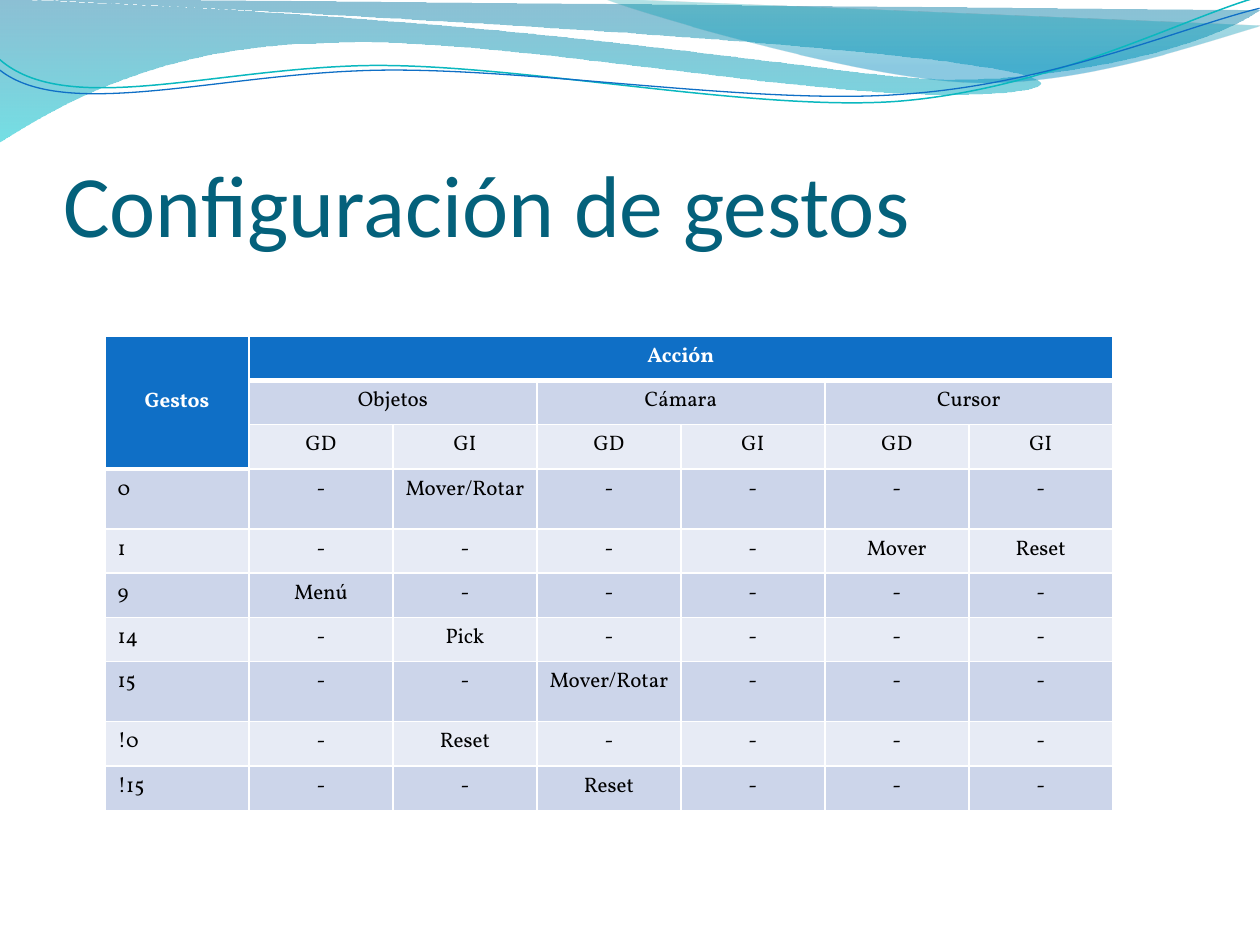
"""Build the gesture configuration slide: waves, title and action table."""
from lxml import etree
from pptx import Presentation
from pptx.dml.color import RGBColor
from pptx.enum.text import MSO_ANCHOR, MSO_AUTO_SIZE, PP_ALIGN
from pptx.oxml.ns import qn
from pptx.util import Pt

LEFT, CENTER = PP_ALIGN.LEFT, PP_ALIGN.CENTER
MIDDLE, TOP, BOTTOM = MSO_ANCHOR.MIDDLE, MSO_ANCHOR.TOP, MSO_ANCHOR.BOTTOM
NO_AUTOFIT = MSO_AUTO_SIZE.NONE

PX = 914400 // 126
WIDTH, HEIGHT = 1260, 945

WHITE = RGBColor(0xFF, 0xFF, 0xFF)
BLACK = RGBColor(0x00, 0x00, 0x00)
BLUE = RGBColor(0x0F, 0x6F, 0xC6)
TEAL = RGBColor(0x0A, 0xB8, 0xBF)
TITLE_COLOR = RGBColor(0x04, 0x61, 0x7B)
BANDS = (RGBColor(0xE7, 0xEB, 0xF5), RGBColor(0xCC, 0xD5, 0xEA))
DEEP_BLUE = RGBColor(0x00, 0x74, 0xA1)
CYAN = RGBColor(0x00, 0xC6, 0xCF)
SEA_GREEN = RGBColor(0x00, 0xA1, 0xA9)
SKY_BLUE = RGBColor(0x00, 0x8B, 0xBF)

TITLE = "Configuración de gestos"
TITLE_BOX = (63, 97, 1134, 158)

# Each wave lists its start, then lines (one point) and Bézier curves (three points).
WAVES = [
    ((0, 0), [
        [(554, -1)],
        [(600, 21), (837, 79), (955, 79)], [(1075, 79), (1207, 47), (1260, 11)],
        [(1261, 45)],
        [(1238, 55), (1096, 96), (940, 94)], [(784, 94), (481, 35), (324, 43)],
        [(163, 45), (58, 105), (-1, 142)],
        [(0, 0)],
    ], [(0, DEEP_BLUE, 45), (100, CYAN, 55)]),
    ((604, -1), [
        [(641, 14), (859, 78), (969, 82)], [(1079, 87), (1211, 40), (1260, 26)],
        [(1260, 0)],
        [(604, -1)],
    ], [(0, SEA_GREEN, 30), (80, SKY_BLUE, 45)]),
]
RIPPLE_ROTATION = 357.3
RIPPLES = [
    ((-2, 110), [
        [(58, 90), (199, 52), (350, 53)], [(499, 53), (745, 118), (896, 114)],
        [(1049, 109), (1184, 45), (1260, 27)],
    ], TEAL, 0.85),
    ((-2, 101), [
        [(57, 94), (207, 57), (357, 58)], [(509, 58), (750, 112), (902, 107)],
        [(1052, 104), (1188, 52), (1262, 38)],
    ], BLUE, 0.75),
]

TABLE_LEFT, TABLE_TOP, COLUMN_WIDTH = 105, 336, 144
ROW_HEIGHT, TALL_ROW_HEIGHT = 44.33, 60
ROWS = [
    ["Gestos", "Acción", "", "", "", "", ""],
    ["", "Objetos", "", "Cámara", "", "Cursor", ""],
    ["", "GD", "GI", "GD", "GI", "GD", "GI"],
    ["0", "-", "Mover/Rotar", "-", "-", "-", "-"],
    ["1", "-", "-", "-", "-", "Mover", "Reset"],
    ["9", "Menú", "-", "-", "-", "-", "-"],
    ["14", "-", "Pick", "-", "-", "-", "-"],
    ["15", "-", "-", "Mover/Rotar", "-", "-", "-"],
    ["!0", "-", "Reset", "-", "-", "-", "-"],
    ["!15", "-", "-", "Reset", "-", "-", "-"],
]
HEADER_ROWS = 3
MERGES = [((0, 0), (2, 0)), ((0, 1), (0, 6))] + [
    ((1, column), (1, column + 1)) for column in (1, 3, 5)]


def set_font(paragraph, name, size, color, bold=False):
    font = paragraph.font
    font.name, font.size, font.bold = name, Pt(size), bold
    font.color.rgb = color


def add_outline(slide, start, segments, close):
    builder = slide.shapes.build_freeform(*start, scale=PX)
    builder.add_line_segments([segment[-1] for segment in segments], close=close)
    outline = builder.convert_to_shape()
    outline.shadow.inherit = False
    lines = list(outline._element.iter(qn("a:lnTo")))
    for line, segment in zip(lines, segments):
        if len(segment) == 3:
            curve = etree.Element(qn("a:cubicBezTo"))
            for x, y in segment:
                etree.SubElement(curve, qn("a:pt"), x=str(x * PX - outline.left),
                                 y=str(y * PX - outline.top))
            line.getparent().replace(line, curve)
    path_size = next(outline._element.iter(qn("a:path")))
    path_size.set("w", str(outline.width))
    path_size.set("h", str(outline.height))
    return outline


def fill_gradient(shape, stops):
    shape.fill.gradient()
    shape.fill.gradient_angle = 270
    stop_list = shape._element.spPr.find(qn("a:gradFill")).find(qn("a:gsLst"))
    for stop in list(stop_list):
        stop_list.remove(stop)
    for position, color, opacity in stops:
        stop = etree.SubElement(stop_list, qn("a:gs"), pos=str(position * 1000))
        rgb = etree.SubElement(stop, qn("a:srgbClr"), val=str(color))
        etree.SubElement(rgb, qn("a:alpha"), val=str(opacity * 1000))


def set_header_borders(cell):
    properties = cell._tc.get_or_add_tcPr()
    for side, width in (("L", 1), ("R", 1), ("T", 1), ("B", 3)):
        border = etree.SubElement(properties, qn(f"a:ln{side}"), w=str(Pt(width)))
        fill = etree.SubElement(border, qn("a:solidFill"))
        etree.SubElement(fill, qn("a:srgbClr"), val=str(WHITE))


def add_waves(slide):
    for start, segments, stops in WAVES:
        wave = add_outline(slide, start, segments, True)
        fill_gradient(wave, stops)
        wave.line.fill.background()
    for start, segments, color, width in RIPPLES:
        ripple = add_outline(slide, start, segments, False)
        ripple.rotation = RIPPLE_ROTATION
        ripple.fill.background()
        ripple.line.color.rgb = color
        ripple.line.width = Pt(width)


def place_title(slide):
    title = slide.shapes.title
    title.left, title.top, title.width, title.height = (v * PX for v in TITLE_BOX)
    frame = title.text_frame
    frame.text = TITLE
    frame.auto_size, frame.word_wrap = NO_AUTOFIT, True
    frame.vertical_anchor = BOTTOM
    frame.margin_left = frame.margin_right = frame.margin_bottom = 0
    frame.paragraphs[0].alignment = LEFT
    set_font(frame.paragraphs[0], "Calibri", 50, TITLE_COLOR)
    title._element.getparent().append(title._element)


def add_gesture_table(slide):
    heights = [round((TALL_ROW_HEIGHT if "Mover/Rotar" in row else ROW_HEIGHT) * PX)
               for row in ROWS]
    columns = len(ROWS[0])
    table = slide.shapes.add_table(
        len(ROWS), columns, TABLE_LEFT * PX, TABLE_TOP * PX,
        columns * COLUMN_WIDTH * PX, sum(heights)).table
    for column in table.columns:
        column.width = COLUMN_WIDTH * PX
    for r, (texts, height) in enumerate(zip(ROWS, heights)):
        table.rows[r].height = height
        for c, text in enumerate(texts):
            cell = table.cell(r, c)
            gesture_header = c == 0 and r < HEADER_ROWS
            header = r == 0 or gesture_header
            cell.text = text
            cell.vertical_anchor = MIDDLE if gesture_header else TOP
            if header:
                set_header_borders(cell)
            cell.fill.solid()
            cell.fill.fore_color.rgb = BLUE if header else BANDS[r % 2]
            paragraph = cell.text_frame.paragraphs[0]
            paragraph.alignment = LEFT if c == 0 and not header else CENTER
            set_font(paragraph, "Vollkorn", 12, WHITE if header else BLACK, header)
    for first, last in MERGES:
        table.cell(*first).merge(table.cell(*last))


def main():
    presentation = Presentation()
    presentation.slide_width, presentation.slide_height = WIDTH * PX, HEIGHT * PX
    slide = presentation.slides.add_slide(presentation.slide_layouts[5])
    add_waves(slide)
    place_title(slide)
    add_gesture_table(slide)
    presentation.save("out.pptx")


if __name__ == "__main__":
    main()
